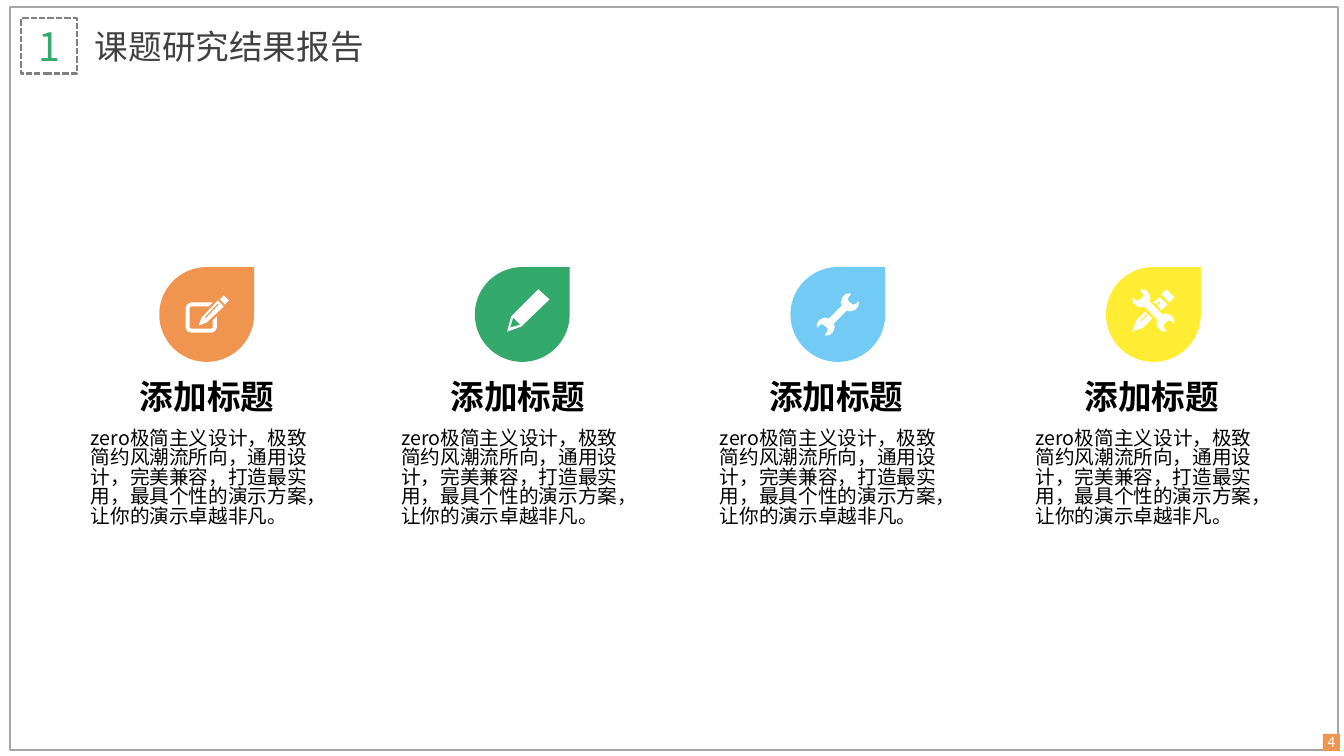
from lxml import etree
from pptx import Presentation, util as u
from pptx.dml.color import RGBColor
from pptx.enum import dml, shapes, text
from pptx.oxml.ns import qn

FONT = "Noto Sans CJK SC"
ZERO_INSETS = dict.fromkeys(("margin_left", "margin_right", "margin_top", "margin_bottom"), 0)
LEFT, CENTER = text.PP_ALIGN.LEFT, text.PP_ALIGN.CENTER
MIDDLE, TOP = text.MSO_ANCHOR.MIDDLE, text.MSO_ANCHOR.TOP


def color(hex_code):
    return RGBColor.from_string(hex_code)


def write(box, words, size, hex_code, align=LEFT, bold=False, spacing=1.0, **frame_format):
    """Put one formatted paragraph into a shape; frame_format goes to its text frame."""
    frame = box.text_frame
    for name, value in {"word_wrap": True, "vertical_anchor": TOP, **frame_format}.items():
        setattr(frame, name, value)
    para = frame.paragraphs[0]
    para.alignment, para.line_spacing = align, spacing
    span = para.add_run()
    span.text = words
    for name, value in {"size": u.Pt(size), "bold": bold, "name": FONT}.items():
        setattr(span.font, name, value)
    span.font.color.rgb = color(hex_code)
    etree.SubElement(span.font._element, qn("a:ea"), typeface=FONT)


deck = Presentation()
deck.slide_width, deck.slide_height = u.Inches(13.33), u.Inches(7.5)
page = deck.slides.add_slide(deck.slide_layouts[5])

# Frame, section number and page number: place, fill, line (colour, width, dash)
plain_boxes = {
    "frame": ((0.1, 0.07, 13.17, 7.37), None, ("A6A6A6", 1, None)),
    "section": ((0.21, 0.18, 0.55, 0.55), None, ("808080", 1.5, dml.MSO_LINE.SQUARE_DOT)),
    "number": ((13.12, 7.28, 0.17, 0.17), "F0954F", None),
}
boxes = {}
for name, (place, fill, line) in plain_boxes.items():
    box = page.shapes.add_shape(shapes.MSO_SHAPE.RECTANGLE, *map(u.Inches, place))
    box.shadow.inherit = False
    if fill:
        box.fill.solid()
        box.fill.fore_color.rgb = color(fill)
    else:
        box.fill.background()
    if line:
        box.line.color.rgb, box.line.width = color(line[0]), u.Pt(line[1])
        box.line.dash_style = line[2]
    else:
        box.line.fill.background()
    boxes[name] = box
write(boxes["section"], "1", 28, "33AA6C", CENTER, vertical_anchor=MIDDLE, **ZERO_INSETS)
write(boxes["number"], "4", 10, "FFFFFF", CENTER, vertical_anchor=MIDDLE, **ZERO_INSETS)

title = page.shapes.title
title.left, title.top, title.width, title.height = map(u.Inches, (0.84, 0.18, 3.59, 0.55))
write(title, "课题研究结果报告", 24, "404040", vertical_anchor=MIDDLE)

# Icon outlines, in hundredths of an inch from the corner of the drop.
# An icon is a list of shapes; a shape is an outline followed by its holes.
note_frame = [(53, 60), (52, 61), (32, 61), (30, 60), (30, 40), (32, 39), (49, 39), (53, 35),
              (32, 35), (28, 36.5), (26, 40), (26, 60), (28, 64), (32, 65), (52, 65),
              (55.5, 63.5), (57, 60), (57, 49), (53, 53)]
note_pen = [(64, 39), (58, 33), (42, 50), (39, 58), (47, 55)]
note_pen_hole = [(46, 51), (45, 50), (58, 36), (59, 37)]
note_pen_cap = [(60, 32), (65, 37), (69, 33), (64, 28)]
pencil = [(74, 32), (63, 22), (36, 49), (32, 64), (46, 59)]
pencil_hole = [(35, 60), (38, 50), (45, 57)]
wrench_head = [(56, 43), (59, 44), (64, 42.5), (67, 39.5), (68, 35), (67, 34), (65.5, 36),
               (64, 37), (62, 37), (59.5, 35.5), (57.5, 33.5), (57, 32), (57.5, 30), (60, 27),
               (59, 26), (55, 26.5), (51.5, 30), (50, 35), (51, 38)]
wrench = wrench_head + [(94 - x, 94 - y) for x, y in wrench_head]
crossed_wrench = [(94 - x, y - 4) for x, y in wrench]
crossed_tip = [(42, 47), (35, 54), (34, 53), (41, 46), (39, 44), (30, 53), (26, 64), (37, 60),
               (46, 51)]
crossed_body = [(49, 37), (53, 34), (54, 35), (51, 38), (55, 43), (61, 37), (53, 30), (47, 35)]
crossed_cap = [(60, 22), (55, 27), (63, 35), (68, 30)]

# Each column: drop colour, left edge of the text, icon
columns = [
    ("F0954F", 0.9, [[note_frame], [note_pen, note_pen_hole], [note_pen_cap]]),
    ("33AA6C", 3.98, [[pencil, pencil_hole]]),
    ("71CBF4", 7.14, [[wrench]]),
    ("FFED33", 10.27, [[crossed_tip], [crossed_body], [crossed_cap], [crossed_wrench]]),
]
DROP_LEFT, DROP_TOP, DROP_SIZE, PITCH = 1.58, 2.65, 0.94, 3.13
TIGHT = 0.83
BODY = ("zero极简主义设计，极致简约风潮流所向，通用设计，完美兼容，打造最实用，"
        "最具个性的演示方案，让你的演示卓越非凡。")

for index, (drop_color, text_left, icon) in enumerate(columns):
    left, top = u.Inches(DROP_LEFT + index * PITCH), u.Inches(DROP_TOP)
    size = u.Inches(DROP_SIZE)
    group = page.shapes.add_group_shape()
    drop = group.shapes.add_shape(shapes.MSO_SHAPE.TEAR, left, top, size, size)
    parts = [(drop, drop_color)]
    for outlines in icon:
        builder = None
        for outline in outlines:
            points = [(x * 10, y * 10) for x, y in outline]
            if builder is None:
                builder = group.shapes.build_freeform(*points[0], scale=u.Inches(1) / 1000)
            else:
                builder.move_to(*points[0])
            builder.add_line_segments(points[1:], close=True)
        parts.append((builder.convert_to_shape(left, top), "FFFFFF"))
    for part, fill in parts:
        part.shadow.inherit = False
        part.fill.solid()
        part.fill.fore_color.rgb = color(fill)
        part.line.fill.background()

    heading = page.shapes.add_textbox(*map(u.Inches, (text_left + 0.41, 3.8, 1.49, 0.4)))
    write(heading, "添加标题", 24, "000000", CENTER, bold=True, spacing=TIGHT, **ZERO_INSETS)
    body = page.shapes.add_textbox(*map(u.Inches, (text_left, 4.26, 2.29, 1.18)))
    write(body, BODY, 14, "000000", spacing=TIGHT, **ZERO_INSETS)

deck.save("out.pptx")
